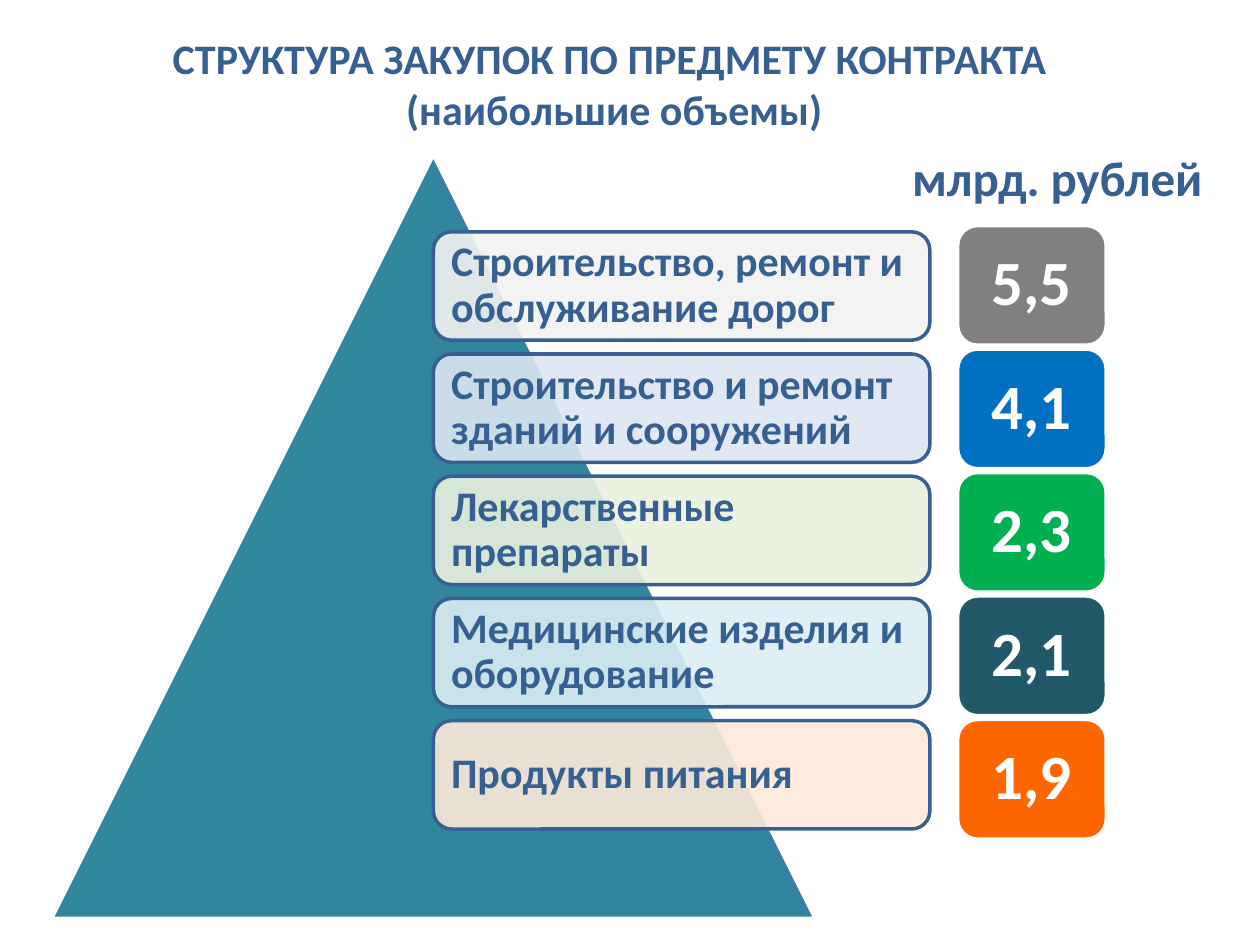
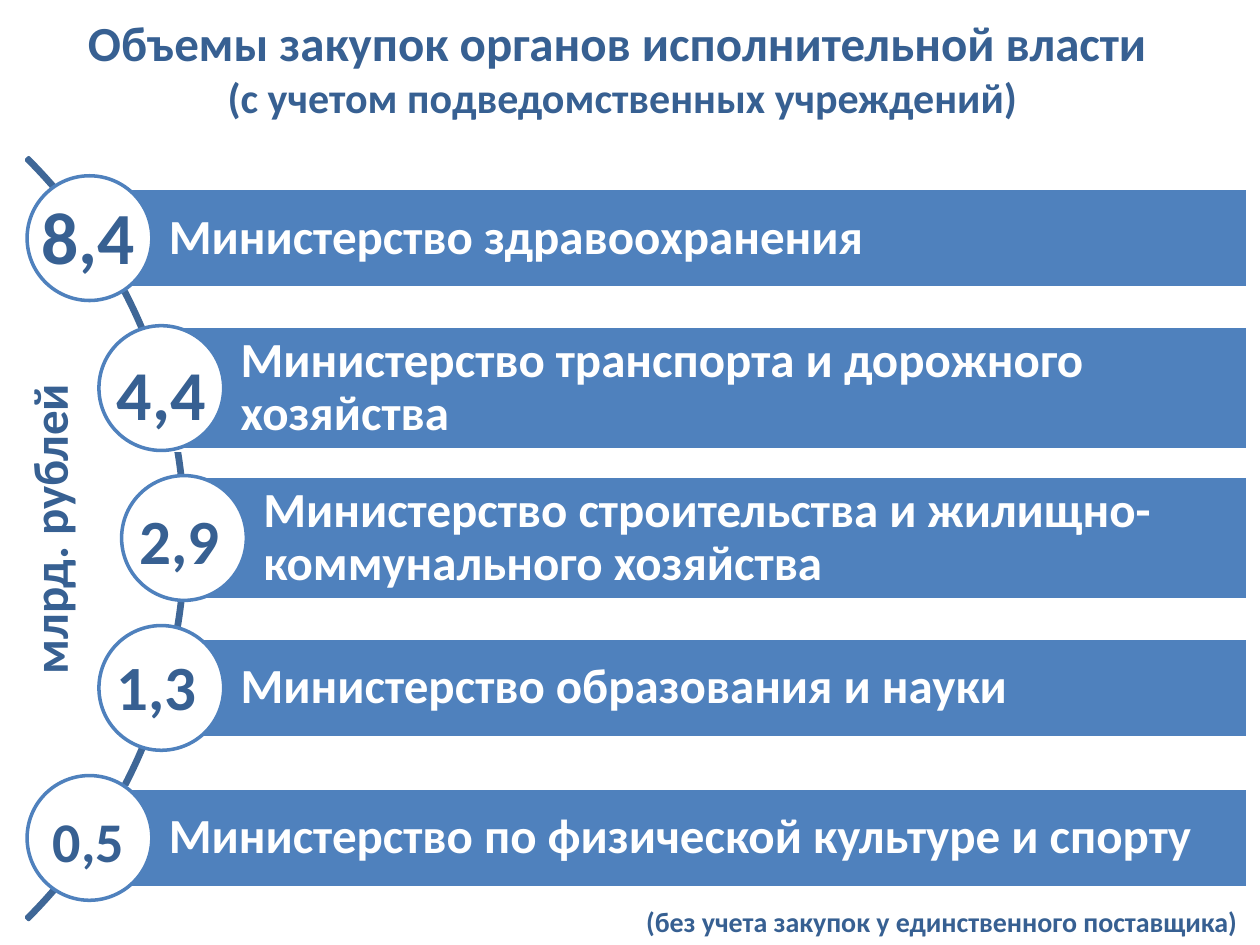
from dataclasses import dataclass

from lxml.etree import SubElement
from pptx import Presentation
from pptx.dml.color import RGBColor
from pptx.enum.shapes import MSO_SHAPE
from pptx.enum.text import MSO_ANCHOR, PP_ALIGN
from pptx.oxml.ns import qn
from pptx.shapes.autoshape import Shape
from pptx.slide import Slide
from pptx.util import Inches, Pt

FONT = "Calibri"
WHITE = RGBColor(0xFF, 0xFF, 0xFF)
NAVY = RGBColor(0x37, 0x60, 0x92)
BLUE = RGBColor(0x4F, 0x81, 0xBD)
ARC_BLUE = RGBColor(0x3F, 0x67, 0x97)
TEAL = RGBColor(0x31, 0x85, 0x9C)
UNIT = "млрд. рублей"


@dataclass(frozen=True)
class Box:
    """Position and size in inches."""
    left: float
    top: float
    width: float
    height: float

    def lengths(self) -> list[Inches]:
        return [Inches(v) for v in (self.left, self.top, self.width, self.height)]


@dataclass(frozen=True)
class Subject:
    name: str
    amount: str
    card_color: RGBColor
    badge_color: RGBColor


@dataclass(frozen=True)
class Ministry:
    name: str
    amount: str
    center_x: float
    bar_height: float
    amount_box: Box
    amount_size: int


SUBJECTS = [
    Subject("Строительство, ремонт и обслуживание дорог", "5,5",
            RGBColor(0xF2, 0xF2, 0xF2), RGBColor(0x80, 0x80, 0x80)),
    Subject("Строительство и ремонт зданий и сооружений", "4,1",
            RGBColor(0xDC, 0xE6, 0xF2), RGBColor(0x00, 0x70, 0xC0)),
    Subject("Лекарственные препараты", "2,3",
            RGBColor(0xEB, 0xF1, 0xDE), RGBColor(0x00, 0xB0, 0x50)),
    Subject("Медицинские изделия и оборудование", "2,1",
            RGBColor(0xDB, 0xEE, 0xF4), RGBColor(0x21, 0x59, 0x68)),
    Subject("Продукты питания", "1,9",
            RGBColor(0xFD, 0xEA, 0xDA), RGBColor(0xFF, 0x66, 0x00)),
]

MINISTRIES = [
    Ministry("Министерство здравоохранения", "8,4",
             0.71, 0.79, Box(0.23, 1.47, 0.95, 0.81), 42),
    Ministry("Министерство транспорта и дорожного хозяйства", "4,4",
             1.28, 0.98, Box(0.83, 2.73, 0.92, 0.77), 40),
    Ministry("Министерство строительства и жилищно-коммунального хозяйства", "2,9",
             1.46, 0.98, Box(1.01, 3.93, 0.84, 0.71), 36),
    Ministry("Министерство образования и науки", "1,3",
             1.28, 0.79, Box(0.83, 5.09, 0.84, 0.71), 36),
    Ministry("Министерство по физической культуре и спорту", "0,5",
             0.71, 0.79, Box(0.32, 6.35, 0.77, 0.64), 32),
]


def add_figure(slide: Slide, kind: MSO_SHAPE, box: Box,
               fill: RGBColor | None, line: RGBColor) -> Shape:
    figure = slide.shapes.add_shape(kind, *box.lengths())
    figure.shadow.inherit = False
    if fill is None:
        figure.fill.background()
    else:
        figure.fill.solid()
        figure.fill.fore_color.rgb = fill
    figure.line.color.rgb = line
    figure.line.width = Pt(2)
    return figure


def set_opacity(figure: Shape, percent: int) -> None:
    color = figure.fill._xPr.find(qn("a:solidFill"))[0]
    SubElement(color, qn("a:alpha"), val=str(percent * 1000))


def write(holder: Shape, lines: list[tuple[str, int]], color: RGBColor,
          align: PP_ALIGN = PP_ALIGN.LEFT, spacing: float = 1.0) -> None:
    """Fill the holder with bold paragraphs, each a (text, point size) pair."""
    frame = holder.text_frame
    for index, (text, size) in enumerate(lines):
        paragraph = frame.paragraphs[0] if index == 0 else frame.add_paragraph()
        paragraph.text = text
        paragraph.alignment = align
        paragraph.line_spacing = spacing
        font = paragraph.font
        font.name, font.size, font.bold = FONT, Pt(size), True
        font.color.rgb = color


def write_inside(figure: Shape, text: str, size: int, color: RGBColor,
                 inset: float, left_inset: float | None = None,
                 align: PP_ALIGN = PP_ALIGN.LEFT) -> None:
    frame = figure.text_frame
    frame.word_wrap = True
    frame.vertical_anchor = MSO_ANCHOR.MIDDLE
    frame.margin_top = frame.margin_right = frame.margin_bottom = Inches(inset)
    frame.margin_left = Inches(inset if left_inset is None else left_inset)
    write(figure, [(text, size)], color, align, spacing=0.9)


def add_label(slide: Slide, box: Box, lines: list[tuple[str, int]],
              align: PP_ALIGN = PP_ALIGN.LEFT, wrap: bool = False) -> Shape:
    label = slide.shapes.add_textbox(*box.lengths())
    label.text_frame.word_wrap = wrap
    write(label, lines, NAVY, align)
    return label


def add_title(slide: Slide, box: Box, lines: list[tuple[str, int]],
              wrap: bool = False) -> None:
    add_label(slide, box, lines, PP_ALIGN.CENTER, wrap)


def build_subjects(slide: Slide) -> None:
    add_figure(slide, MSO_SHAPE.ISOSCELES_TRIANGLE,
               Box(0.41, 1.23, 6.06, 6.06), TEAL, WHITE)
    add_title(slide, Box(1.24, 0.21, 7.27, 0.91),
              [("СТРУКТУРА ЗАКУПОК ПО ПРЕДМЕТУ КОНТРАКТА ", 24),
               ("(наибольшие объемы)", 24)])
    for row, subject in enumerate(SUBJECTS):
        card = add_figure(slide, MSO_SHAPE.ROUNDED_RECTANGLE,
                          Box(3.44, 1.84 + 0.97 * row, 3.94, 0.86),
                          subject.card_color, NAVY)
        set_opacity(card, 90)
        write_inside(card, subject.name, 24, NAVY, inset=0.1)
        badge = add_figure(slide, MSO_SHAPE.ROUNDED_RECTANGLE,
                           Box(7.6, 1.79 + 0.98 * row, 1.18, 0.95),
                           subject.badge_color, WHITE)
        write_inside(badge, subject.amount, 36, WHITE, inset=0.15,
                     align=PP_ALIGN.CENTER)
    add_label(slide, Box(7.14, 1.12, 2.76, 0.57), [(UNIT, 28)], wrap=True)


def build_ministries(slide: Slide) -> None:
    add_title(slide, Box(0.3, 0.05, 9.28, 0.98),
              [("Объемы закупок органов исполнительной власти ", 28),
               ("(с учетом подведомственных учреждений)", 24)], wrap=True)
    arc = add_figure(slide, MSO_SHAPE.BLOCK_ARC,
                     Box(-7.07, 0, 8.55, 8.55), None, ARC_BLUE)
    for index, value in enumerate((189, 27, 0.003)):
        arc.adjustments[index] = value

    bar_right, diameter = 9.9, 0.99
    for row, ministry in enumerate(MINISTRIES):
        center_y = 1.89 + 1.19 * row
        bar = add_figure(slide, MSO_SHAPE.RECTANGLE,
                         Box(ministry.center_x, center_y - ministry.bar_height / 2,
                             bar_right - ministry.center_x, ministry.bar_height),
                         BLUE, WHITE)
        write_inside(bar, ministry.name, 28, WHITE, inset=0.08, left_inset=0.63)
        add_figure(slide, MSO_SHAPE.OVAL,
                   Box(ministry.center_x - diameter / 2, center_y - diameter / 2,
                       diameter, diameter), WHITE, BLUE)
        add_label(slide, ministry.amount_box,
                  [(ministry.amount, ministry.amount_size)])

    add_label(slide, Box(-0.88, 3.9, 2.53, 0.57), [(UNIT, 28)]).rotation = 270
    add_label(slide, Box(5.03, 7.13, 5, 0.37),
              [("(без учета закупок у единственного поставщика)", 16)])


def main() -> None:
    deck = Presentation()
    deck.slide_width, deck.slide_height = Inches(10), Inches(7.5)
    blank = deck.slide_layouts[6]
    for build in (build_subjects, build_ministries):
        build(deck.slides.add_slide(blank))
    deck.save("out.pptx")


if __name__ == "__main__":
    main()
